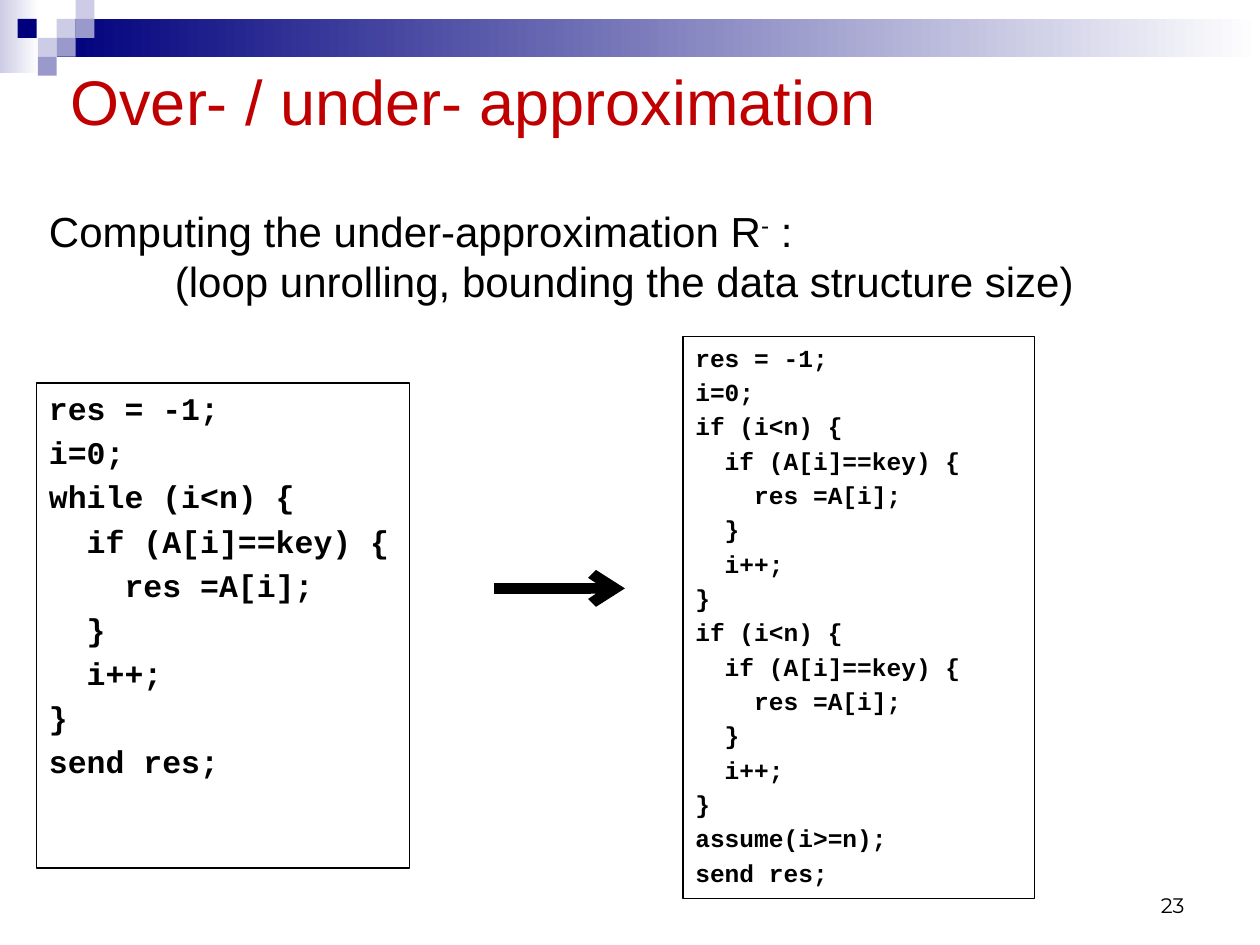
"""Build the slide on over- and under-approximation by loop unrolling."""
from typing import NamedTuple

from pptx import Presentation
from pptx import util as u
from pptx.dml.color import RGBColor
from pptx.enum import shapes, text
from pptx.oxml.ns import qn
from lxml import etree

BLACK, WHITE, RED = "000000", "FFFFFF", "C00000"
NAVY, LAVENDER, VIOLET = "00007D", "CCCCE6", "9999CC"
TILE = 0.15


class Area(NamedTuple):
    left: float
    top: float
    width: float
    height: float


class Band(NamedTuple):
    area: Area
    start: str


class Tile(NamedTuple):
    left: float
    top: float
    colour: str


class CodeBox(NamedTuple):
    area: Area
    size: float
    lines: list[str]


BODY = ["  if (A[i]==key) {", "    res =A[i];", "  }", "  i++;", "}"]
START = ["res = -1;", "i=0;"]
UNROLLED = ["if (i<n) {", *BODY] * 2

BANDS = [Band(Area(0, 0, 0.31, 0.58), LAVENDER), Band(Area(0.45, 0.15, 9.55, 0.3), NAVY)]
TILES = [
    Tile(0.45, 0.15, LAVENDER),
    Tile(0.6, 0, LAVENDER),
    Tile(0.6, 0.15, VIOLET),
    Tile(0.3, 0.3, LAVENDER),
    Tile(0.14, 0.15, NAVY),
    Tile(0.45, 0.3, VIOLET),
    Tile(0.3, 0.45, VIOLET),
]
CODE_BOXES = [
    CodeBox(Area(0.29, 3.04, 2.96, 3.85), 18, [*START, "while (i<n) {", *BODY, "send res;"]),
    CodeBox(Area(5.42, 2.67, 2.79, 4.46), 14, [*START, *UNROLLED, "assume(i>=n);", "send res;"]),
]


def rgb(colour: str) -> RGBColor:
    """Return the colour for a hex string."""
    return RGBColor.from_string(colour)


def inches(area: Area) -> list[u.Length]:
    """Return the lengths of an area."""
    return [u.Inches(value) for value in area]


def apply(target, **values) -> None:
    """Set each named attribute of the target."""
    for name, value in values.items():
        setattr(target, name, value)


def add_run(paragraph, content: str, size: float, font: str = "Arial",
            colour: str = BLACK, bold: bool = False):
    """Append a formatted run to a paragraph."""
    run = paragraph.add_run()
    run.text = content
    apply(run.font, size=u.Pt(size), name=font, bold=bold)
    run.font.color.rgb = rgb(colour)
    return run


def add_rectangle(slide, area: Area):
    """Add a rectangle without shadow or line."""
    shape = slide.shapes.add_shape(shapes.MSO_SHAPE.RECTANGLE, *inches(area))
    shape.shadow.inherit = False
    shape.line.fill.background()
    return shape


def add_band(slide, band: Band) -> None:
    """Add a band that fades to white from left to right."""
    fill = add_rectangle(slide, band.area).fill
    fill.gradient()
    fill.gradient_angle = 0
    for stop, colour in zip(fill.gradient_stops, (band.start, WHITE)):
        stop.color.rgb = rgb(colour)


def add_tile(slide, tile: Tile) -> None:
    """Add one small square of the corner pattern."""
    fill = add_rectangle(slide, Area(tile.left, tile.top, TILE, TILE)).fill
    fill.solid()
    fill.fore_color.rgb = rgb(tile.colour)


def add_code(slide, box: CodeBox) -> None:
    """Add an outlined box of code lines."""
    shape = add_rectangle(slide, box.area)
    shape.fill.background()
    shape.line.color.rgb = rgb(BLACK)
    shape.line.width = u.Pt(0.75)
    frame = shape.text_frame
    apply(frame, word_wrap=True, vertical_anchor=text.MSO_ANCHOR.TOP)
    for index, line in enumerate(box.lines):
        paragraph = frame.add_paragraph() if index else frame.paragraphs[0]
        apply(paragraph, alignment=text.PP_ALIGN.LEFT, space_before=u.Pt(box.size * 0.2))
        properties = paragraph._p.get_or_add_pPr()
        properties.set("marL", str(u.Inches(0.38)))
        properties.set("indent", str(-u.Inches(0.38)))
        add_run(paragraph, line, box.size, "Courier New", bold=True)


def add_text_box(slide, area: Area):
    """Add a wrapping text box and return its frame."""
    frame = slide.shapes.add_textbox(*inches(area)).text_frame
    frame.word_wrap = True
    return frame


def add_title(slide, content: str) -> None:
    """Place and fill the title."""
    title = slide.shapes.title
    apply(title, **dict(zip(Area._fields, inches(Area(0.46, 0.38, 9, 0.83)))))
    apply(title.text_frame, auto_size=text.MSO_AUTO_SIZE.NONE,
          vertical_anchor=text.MSO_ANCHOR.MIDDLE, word_wrap=True)
    paragraph = title.text_frame.paragraphs[0]
    paragraph.alignment = text.PP_ALIGN.LEFT
    add_run(paragraph, content, 36, colour=RED)


def add_explanation(slide) -> None:
    """Add the two lines on computing the under-approximation."""
    frame = add_text_box(slide, Area(0.29, 1.58, 9.29, 0.91))
    first = frame.paragraphs[0]
    add_run(first, "Computing the under-approximation R", 24)
    superscript = add_run(first, "-", 24)
    superscript.font._element.set("baseline", "30000")
    add_run(first, " :", 24)
    second = frame.add_paragraph()
    tabs = etree.SubElement(second._p.get_or_add_pPr(), qn("a:tabLst"))
    etree.SubElement(tabs, qn("a:tab"), pos=str(u.Inches(1)), algn="l")
    add_run(second, "\t(loop unrolling, bounding the data structure size)", 24)


def add_arrow(slide, left: float, right: float, middle: float) -> None:
    """Add a thick horizontal arrow."""
    arrow = slide.shapes.add_connector(
        shapes.MSO_CONNECTOR.STRAIGHT, *inches(Area(left, middle, right, middle)))
    arrow.line.color.rgb = rgb(BLACK)
    arrow.line.width = u.Pt(6)
    etree.SubElement(arrow.line._get_or_add_ln(), qn("a:tailEnd"), type="arrow")
    etree.SubElement(arrow._element.spPr, qn("a:effectLst"))


def add_slide_number(slide, number: str) -> None:
    """Add the slide number at the lower right."""
    frame = add_text_box(slide, Area(7.17, 6.83, 2.33, 0.5))
    frame.vertical_anchor = text.MSO_ANCHOR.BOTTOM
    paragraph = frame.paragraphs[0]
    paragraph.alignment = text.PP_ALIGN.RIGHT
    add_run(paragraph, number, 12, "Montserrat")


def main() -> None:
    """Build and save the presentation."""
    presentation = Presentation()
    apply(presentation, slide_width=u.Inches(10), slide_height=u.Inches(7.5))
    slide = presentation.slides.add_slide(presentation.slide_layouts[5])
    for band in BANDS:
        add_band(slide, band)
    for tile in TILES:
        add_tile(slide, tile)
    add_slide_number(slide, "23")
    add_title(slide, "Over- / under- approximation")
    add_explanation(slide)
    for box in CODE_BOXES:
        add_code(slide, box)
    add_arrow(slide, 3.92, 4.96, 4.67)
    presentation.save("out.pptx")


if __name__ == "__main__":
    main()
